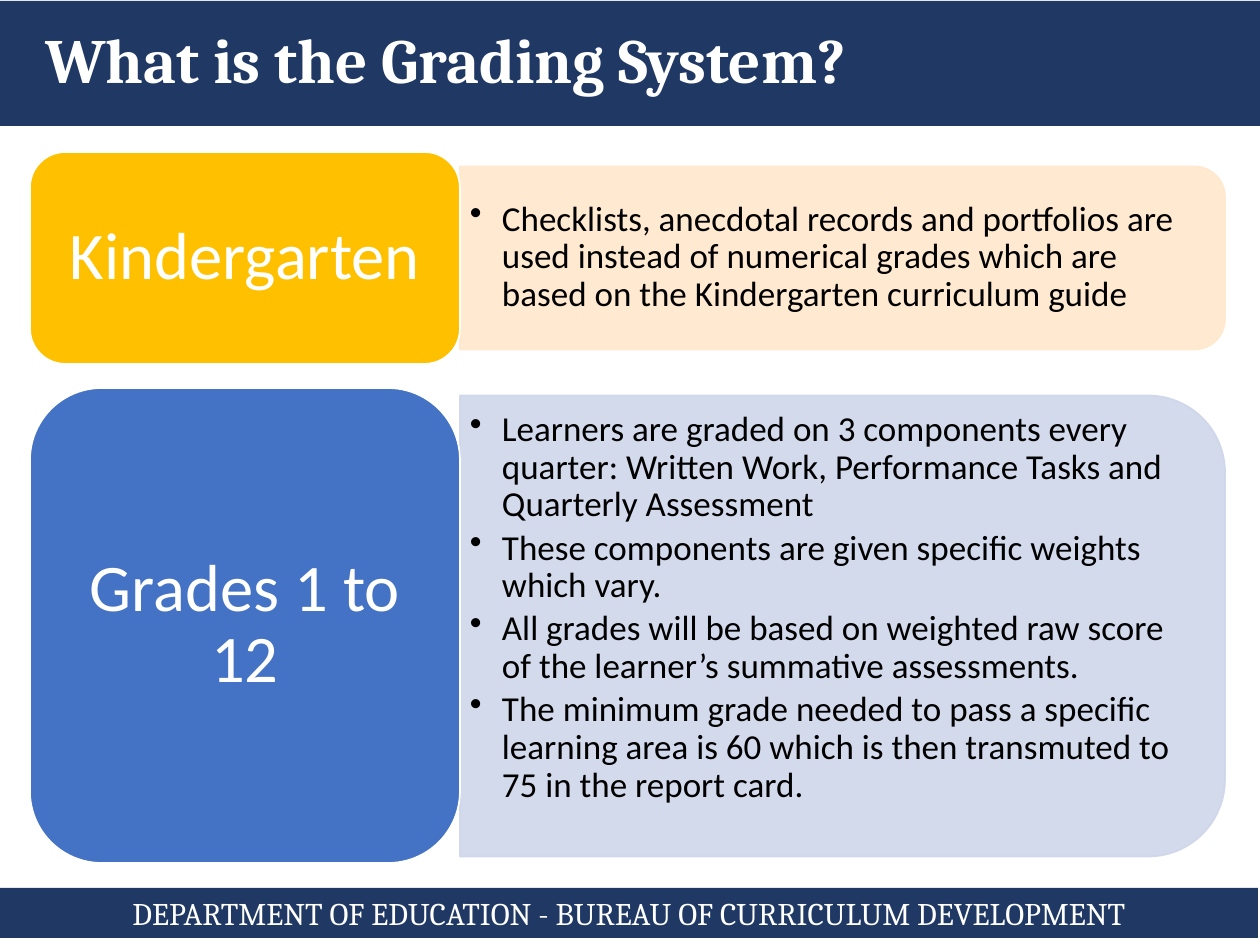
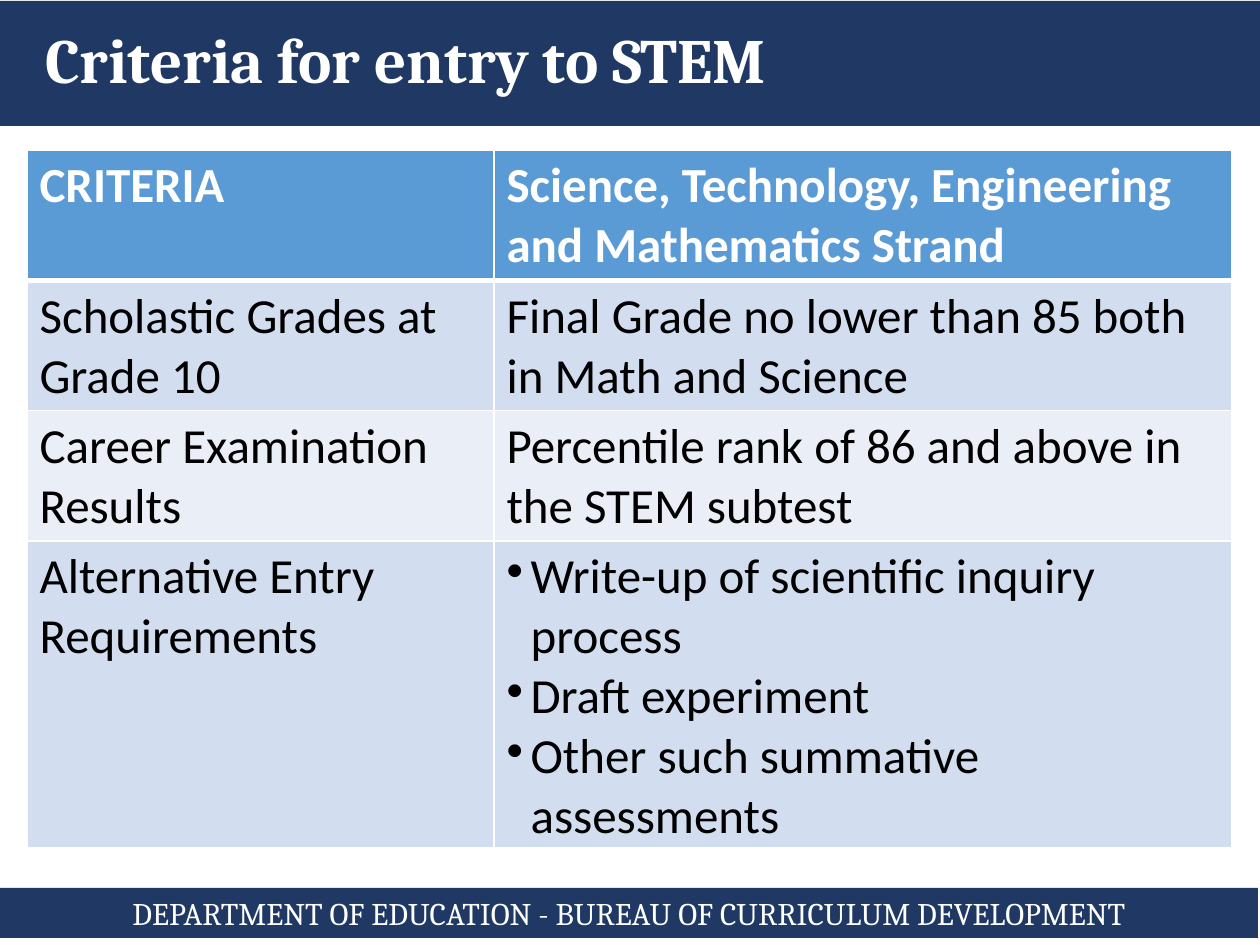
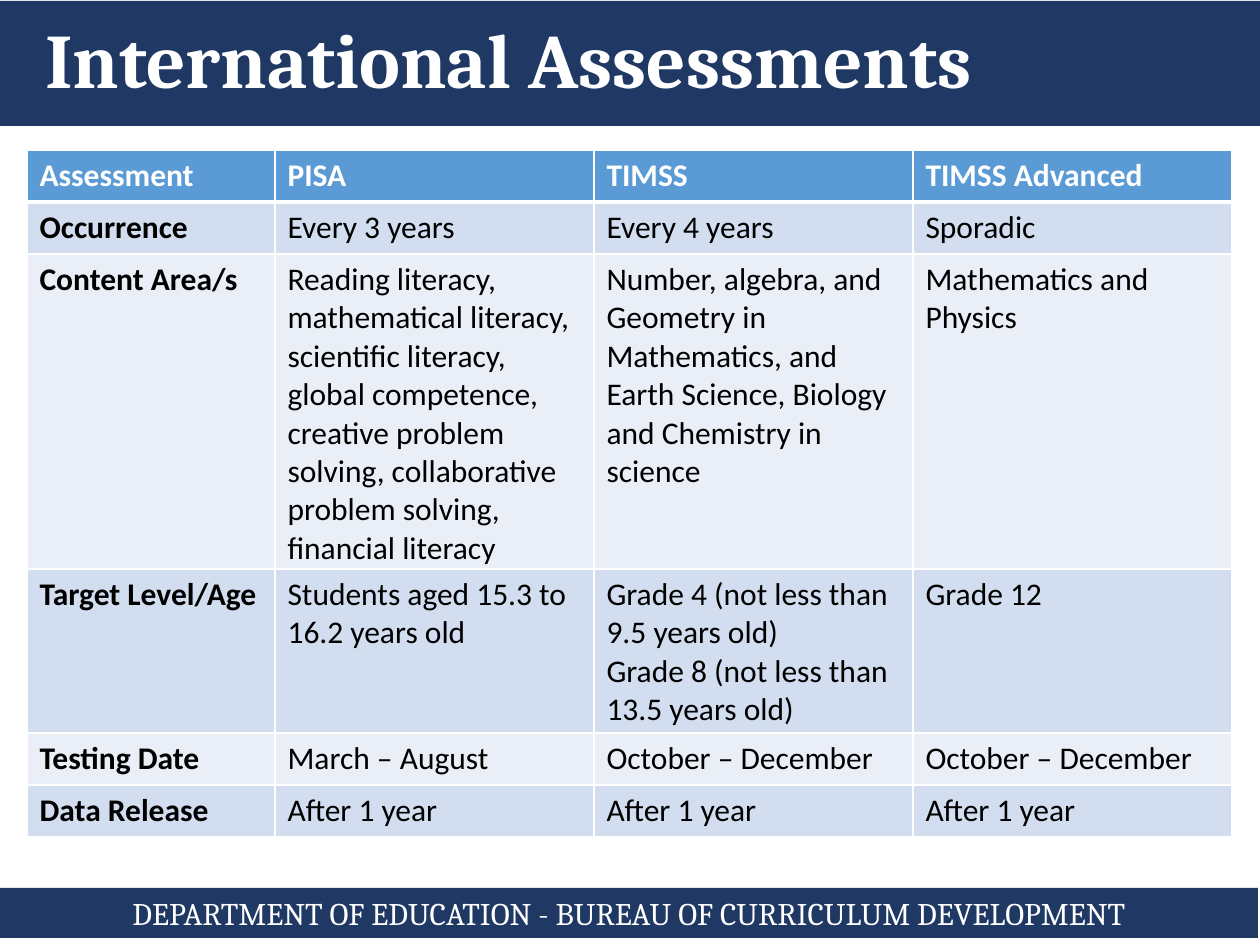
from lxml.etree import SubElement
from pptx import Presentation
from pptx.dml.color import RGBColor
from pptx.enum.shapes import MSO_SHAPE
from pptx.enum.text import MSO_ANCHOR, PP_ALIGN
from pptx.oxml.ns import qn
from pptx.util import Pt

NAVY, WHITE, BLACK = "203864", "FFFFFF", "000000"
GOLD, CREAM, BLUE, PALE_BLUE = "FFC000", "FFE8CC", "4472C4", "CFD6EA"
HEADER_FILL, BAND_FILLS = "5B9BD5", ("D2DEEF", "EAEFF7")
FOOTER = "DEPARTMENT OF EDUCATION - BUREAU OF CURRICULUM DEVELOPMENT"
TABLE_LEFT, TABLE_TOP, ROW_HEIGHT = 27, 150, 52
TEXT_LEFT, LABEL_LEFT, LABEL_WIDTH, PANEL_WIDTH = 460, 30, 430, 765

TITLE = {"font": {"name": "Cambria", "bold": True}, "color": WHITE,
         "paragraph": {"line_spacing": 0.9, "alignment": PP_ALIGN.LEFT}, "indent": 33}
FOOT = {"font": {"name": "Cambria", "size": Pt(18)}, "color": WHITE,
        "paragraph": {"alignment": PP_ALIGN.CENTER}}
LABEL = {"font": {"name": "Calibri", "size": Pt(38)}, "color": WHITE,
         "paragraph": {"line_spacing": 0.9, "alignment": PP_ALIGN.CENTER}}
POINTS = {"font": {"name": "Calibri", "size": Pt(20)}, "color": BLACK,
          "paragraph": {"line_spacing": 0.9, "space_after": Pt(3)},
          "indent": 32, "bullet": True}


def px(length):
    return round(length * 914400 / 126)


def rgb(color):
    return RGBColor.from_string(color)


def assign(target, values):
    for key, value in values.items():
        setattr(target, key, value)


def write(frame, lines, style):
    frame.word_wrap = True
    for number, line in enumerate(lines):
        paragraph = frame.add_paragraph() if number else frame.paragraphs[0]
        run = paragraph.add_run()
        run.text = line
        assign(run.font, style["font"])
        run.font.color.rgb = rgb(style["color"])
        assign(paragraph, style.get("paragraph", {}))
        indent = px(style.get("indent", 0))
        properties = paragraph._p.get_or_add_pPr()
        properties.set("marL", str(indent))
        if style.get("bullet"):
            properties.set("indent", str(-indent))
            SubElement(properties, qn("a:buChar"), char="•")


def set_margins(frame, across, down):
    assign(frame, {"margin_left": px(across), "margin_right": px(across),
                   "margin_top": px(down), "margin_bottom": px(down)})


def add_box(slide, kind, left, top, width, height, fill, outline=None):
    box = slide.shapes.add_shape(kind, px(left), px(top), px(width), px(height))
    box.shadow.inherit = False
    box.fill.solid()
    box.fill.fore_color.rgb = rgb(fill)
    if outline:
        box.line.color.rgb = rgb(outline)
        box.line.width = Pt(1)
    else:
        box.line.fill.background()
    return box


def add_framed_slide(deck, title, size=36):
    slide = deck.slides.add_slide(deck.slide_layouts[6])
    footer = add_box(slide, MSO_SHAPE.RECTANGLE, 0, 888, 1258, 50, NAVY)
    write(footer.text_frame, [FOOTER], FOOT)
    banner = add_box(slide, MSO_SHAPE.RECTANGLE, 0, 1, 1260, 125, NAVY)
    write(banner.text_frame, [title], {**TITLE, "font": {**TITLE["font"], "size": Pt(size)}})
    return slide


def add_panel(slide, middle, height, color):
    panel = add_box(slide, MSO_SHAPE.ROUND_2_SAME_RECTANGLE,
                    TEXT_LEFT + (PANEL_WIDTH - height) / 2, middle - PANEL_WIDTH / 2,
                    height, PANEL_WIDTH, color, color)
    panel.rotation = 90
    for tint in panel._element.spPr.iter(qn("a:srgbClr")):
        SubElement(tint, qn("a:alpha"), val="90000")


def add_points(slide, top, width, height, lines):
    points = slide.shapes.add_textbox(px(TEXT_LEFT), px(top), px(width), px(height))
    frame = points.text_frame
    set_margins(frame, 10, 5)
    frame.vertical_anchor = MSO_ANCHOR.MIDDLE
    write(frame, lines, POINTS)


def add_label(slide, top, height, color, name):
    label = add_box(slide, MSO_SHAPE.ROUNDED_RECTANGLE,
                    LABEL_LEFT, top, LABEL_WIDTH, height, color, WHITE)
    set_margins(label.text_frame, 20, 10)
    write(label.text_frame, [name], LABEL)


def add_borders(cell, row):
    properties = cell._tc.get_or_add_tcPr()
    widths = {"L": 1, "R": 1, "T": 3 if row == 1 else 1, "B": 3 if row == 0 else 1}
    for side, width in widths.items():
        border = SubElement(properties, qn(f"a:ln{side}"), w=str(Pt(width)))
        SubElement(SubElement(border, qn("a:solidFill")), qn("a:srgbClr"), val=WHITE)


def add_grid(slide, rows, widths, height, size, bold_names=False):
    holder = slide.shapes.add_table(len(rows), len(widths), px(TABLE_LEFT), px(TABLE_TOP),
                                    px(sum(widths)), px(height))
    grid = holder.table
    for column, width in zip(grid.columns, widths):
        column.width = px(width)
    for r, row in enumerate(rows):
        grid.rows[r].height = px(ROW_HEIGHT)
        for c, content in enumerate(row):
            cell = grid.cell(r, c)
            add_borders(cell, r)
            cell.fill.solid()
            cell.fill.fore_color.rgb = rgb(BAND_FILLS[(r - 1) % 2] if r else HEADER_FILL)
            style = {"font": {"name": "Calibri", "size": Pt(size),
                              "bold": r == 0 or (bold_names and c == 0)},
                     "color": BLACK if r else WHITE}
            if isinstance(content, list):
                style.update(bullet=True, indent=24)
            lines = content if isinstance(content, (list, tuple)) else [content]
            write(cell.text_frame, lines, style)
    holder.height = px(height)


def add_grading_slide(deck):
    slide = add_framed_slide(deck, "What is the Grading System?")
    add_panel(slide, 258, 183, CREAM)
    add_points(slide, 175, 756, 165, [
        "Checklists, anecdotal records and portfolios are used instead of numerical grades "
        "which are based on the Kindergarten curriculum guide"])
    add_label(slide, 152, 212, GOLD, "Kindergarten")
    add_panel(slide, 626, 461, PALE_BLUE)
    add_points(slide, 417, 742, 382, [
        "Learners are graded on 3 components every quarter: Written Work, "
        "Performance Tasks and Quarterly Assessment",
        "These components are given specific weights which vary.",
        "All grades will be based on weighted raw score of the learner’s summative assessments.",
        "The minimum grade needed to pass a specific learning area is 60 "
        "which is then transmuted to 75 in the report card."])
    add_label(slide, 388, 475, BLUE, "Grades 1 to 12")


def add_stem_slide(deck):
    slide = add_framed_slide(deck, "Criteria for entry to STEM")
    add_grid(slide, [
        ("CRITERIA", "Science, Technology, Engineering and Mathematics Strand"),
        ("Scholastic Grades at Grade 10",
         "Final Grade no lower than 85 both in Math and Science"),
        ("Career Examination Results", "Percentile rank of 86 and above in the STEM subtest"),
        ("Alternative Entry Requirements",
         ["Write-up of scientific inquiry process", "Draft experiment",
          "Other such summative assessments"]),
    ], [467, 738], 697, 28)


def add_assessments_slide(deck):
    slide = add_framed_slide(deck, "International Assessments", 44)
    add_grid(slide, [
        ("Assessment", "PISA", "TIMSS", "TIMSS Advanced"),
        ("Occurrence", "Every 3 years", "Every 4 years", "Sporadic"),
        ("Content Area/s",
         "Reading literacy, mathematical literacy, scientific literacy, global competence, "
         "creative problem solving, collaborative problem solving, financial literacy",
         "Number, algebra, and Geometry in Mathematics, and Earth Science, "
         "Biology and Chemistry in science",
         "Mathematics and Physics"),
        ("Target Level/Age", "Students aged 15.3 to 16.2 years old",
         ("Grade 4 (not less than 9.5 years old)", "Grade 8 (not less than 13.5 years old)"),
         "Grade 12"),
        ("Testing Date", "March – August", "October – December", "October – December"),
        ("Data Release", "After 1 year", "After 1 year", "After 1 year"),
    ], [248, 319, 319, 319], 683, 18, bold_names=True)


def main():
    deck = Presentation()
    assign(deck, {"slide_width": px(1260), "slide_height": px(945)})
    add_grading_slide(deck)
    add_stem_slide(deck)
    add_assessments_slide(deck)
    deck.save("out.pptx")


if __name__ == "__main__":
    main()
